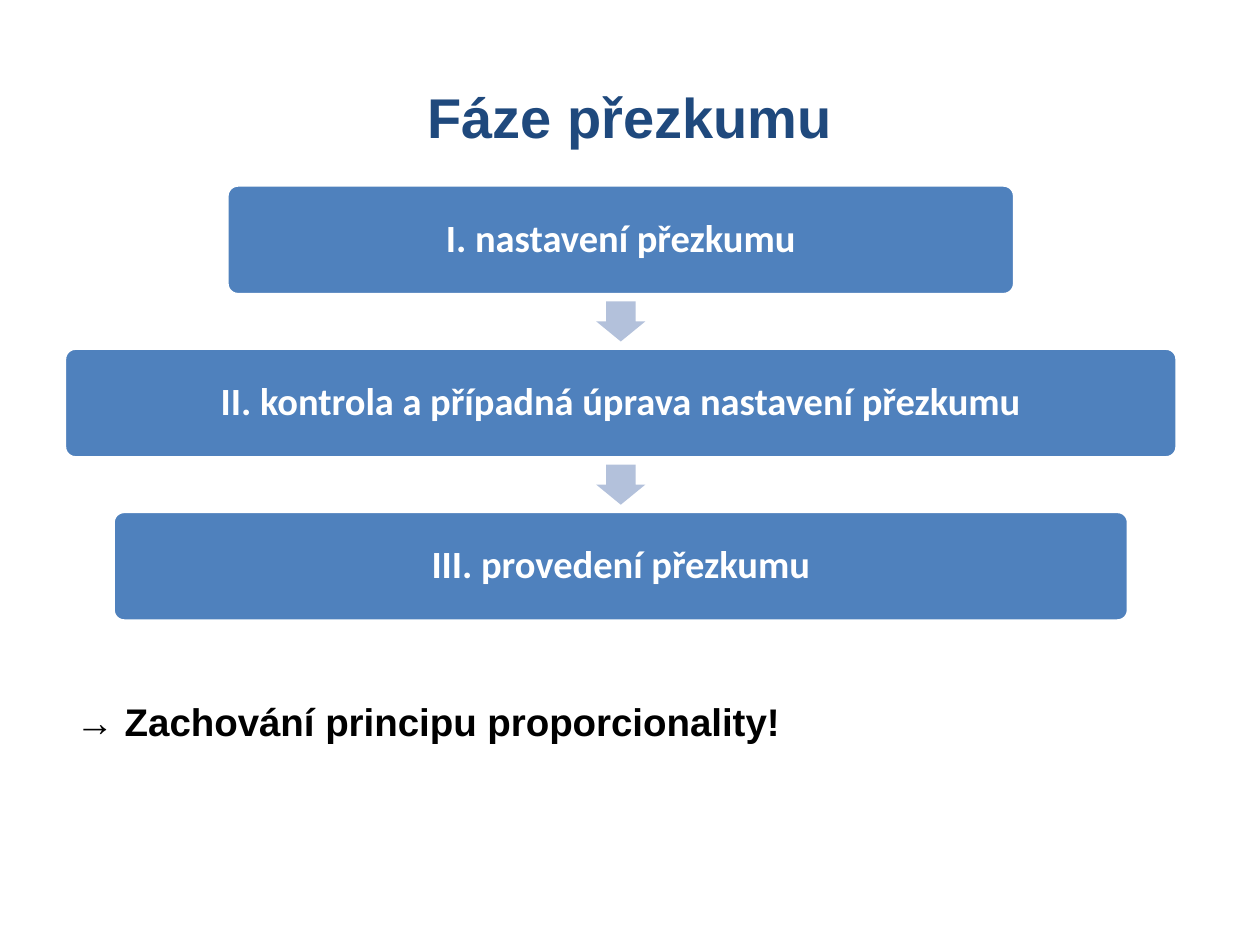
from lxml import etree
from pptx import Presentation
from pptx.dml.color import RGBColor
from pptx.enum import shapes, text
from pptx.oxml.ns import qn
from pptx.util import Cm, Pt

NAVY = RGBColor(0x1F, 0x49, 0x7D)
BLUE = RGBColor(0x4F, 0x81, 0xBD)
PALE_BLUE = RGBColor(0xB3, 0xC1, 0xDB)
WHITE = RGBColor(0xFF, 0xFF, 0xFF)
BLACK = RGBColor(0, 0, 0)

# Each phase with the width of its box
PHASES = [
    ("I. nastavení přezkumu", Cm(15.88)),
    ("II. kontrola a případná úprava nastavení přezkumu", Cm(22.43)),
    ("III. provedení přezkumu", Cm(20.47)),
]


def place(sp, box):
    sp.left, sp.top, sp.width, sp.height = box


def add_run(p, words, font, size, color, bold=None):
    r = p.add_run()
    r.text = words
    r.font.name, r.font.size, r.font.bold = font, Pt(size), bold
    r.font.color.rgb = color


def fill_title(sp, box):
    place(sp, box)
    tf = sp.text_frame
    tf.vertical_anchor = text.MSO_ANCHOR.MIDDLE
    p = tf.paragraphs[0]
    p.alignment = text.PP_ALIGN.CENTER
    add_run(p, "Fáze přezkumu", "Arial", 32, NAVY, True)


def fill_conclusion(sp, box):
    place(sp, box)
    p = sp.text_frame.paragraphs[0]
    # No bullet and no hanging indent
    pPr = p._p.get_or_add_pPr()
    pPr.set("marL", "0")
    pPr.set("indent", "0")
    etree.SubElement(pPr, qn("a:buNone"))
    p.space_before = Pt(0)
    add_run(p, "→ ", "Arial", 22, BLACK)
    add_run(p, "Zachování principu proporcionality!", "Arial", 22, BLACK, True)


def add_part(slide, kind, box, color):
    sp = slide.shapes.add_shape(kind, *box)
    sp.shadow.inherit = False
    sp.fill.solid()
    sp.fill.fore_color.rgb = color
    return sp


def add_phases(slide, left, top, width, height):
    box_h, arrow_w, arrow_h = Cm(2.21), Cm(0.99), Cm(0.81)
    gap = (height - len(PHASES) * box_h) // (len(PHASES) - 1)
    center = left + width // 2
    for i, (label, box_w) in enumerate(PHASES):
        y = top + i * (box_h + gap)
        # Arrow from the phase above
        if i:
            arrow_box = (center - arrow_w // 2, y - (gap + arrow_h) // 2,
                         arrow_w, arrow_h)
            arrow = add_part(slide, shapes.MSO_SHAPE.DOWN_ARROW,
                             arrow_box, PALE_BLUE)
            arrow.adjustments[0] = 0.6
            arrow.adjustments[1] = 0.5
            arrow.line.fill.background()
        # Phase box
        sp = add_part(slide, shapes.MSO_SHAPE.ROUNDED_RECTANGLE,
                      (center - box_w // 2, y, box_w, box_h), BLUE)
        sp.adjustments[0] = 0.1
        sp.line.color.rgb = WHITE
        sp.line.width = Pt(2)
        tf = sp.text_frame
        tf.word_wrap = True
        tf.vertical_anchor = text.MSO_ANCHOR.MIDDLE
        p = tf.paragraphs[0]
        p.alignment = text.PP_ALIGN.CENTER
        p.line_spacing = 0.9
        add_run(p, label, "Calibri", 22, WHITE, True)


def main():
    prs = Presentation()
    prs.slide_width, prs.slide_height = Cm(25.4), Cm(19.05)
    slide = prs.slides.add_slide(prs.slide_layouts[1])
    title, body = slide.placeholders
    fill_title(title, (Cm(1.27), Cm(0.76), Cm(22.86), Cm(3.18)))
    fill_conclusion(body, (Cm(1.27), Cm(13.95), Cm(22.86), Cm(3.07)))
    add_phases(slide, Cm(1.3), Cm(3.73), Cm(22.43), Cm(8.79))
    prs.save("out.pptx")


if __name__ == "__main__":
    main()
